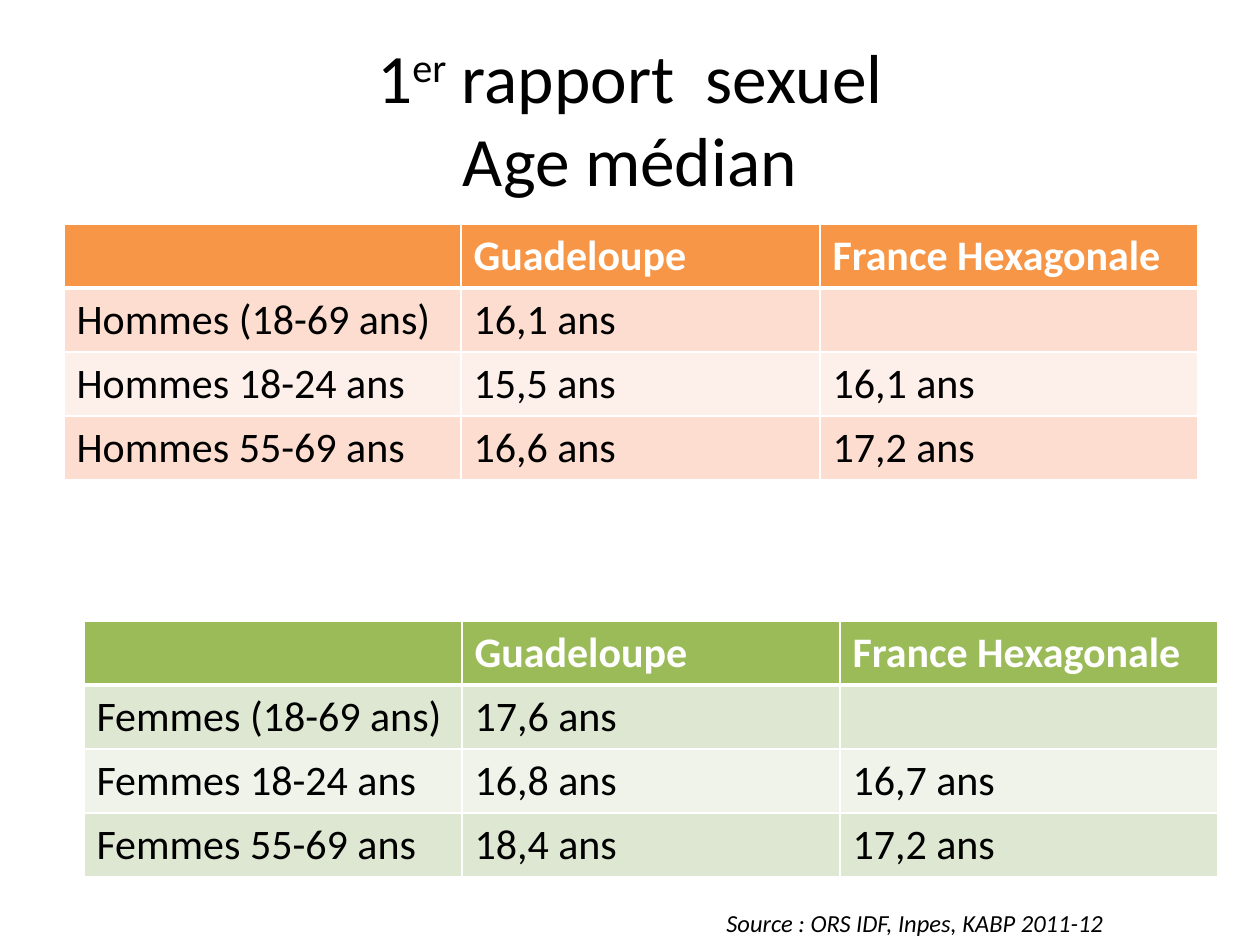
from pptx import Presentation
from pptx.dml.color import RGBColor as Rgb
from pptx.enum.text import MSO_ANCHOR as Anchor, PP_ALIGN as Align
from pptx.oxml import parse_xml
from pptx.oxml.ns import nsdecls
from pptx.util import Pt

SCALE = 914400 / 126
INK = {
    "black": "000000", "white": "FFFFFF",
    "orange": "F79646", "peach": "FCDDCF", "blush": "FDEFE9",
    "green": "9BBB59", "sage": "DEE7D1", "mist": "EFF3EA",
}


def emu(*px):
    return [round(n * SCALE) for n in px]


def write(para, text, size=24, ink="black", bold=False, italic=False, raised=False):
    run = para.add_run()
    run.text = text
    font = run.font
    font.name, font.size, font.bold, font.italic = "Calibri", Pt(size), bold, italic
    font.color.rgb = Rgb.from_string(INK[ink])
    if raised:
        run._r.get_or_add_rPr().set("baseline", "30000")


def edge(cell, side, width):
    cell._tc.get_or_add_tcPr().append(parse_xml(
        f'<a:ln{side} {nsdecls("a")} w="{Pt(width)}"><a:solidFill>'
        f'<a:srgbClr val="{INK["white"]}"/></a:solidFill></a:ln{side}>'))


class Deck:
    """Holds the style and the current slide."""

    def __init__(self):
        self.show = Presentation()
        self.show.slide_width, self.show.slide_height = emu(1260, 945)
        self.slide = self.show.slides.add_slide(self.show.slide_layouts[5])

    def title(self, box, lines):
        shape = self.slide.shapes.title
        shape.left, shape.top, shape.width, shape.height = emu(*box)
        frame = shape.text_frame
        frame.word_wrap, frame.vertical_anchor = True, Anchor.MIDDLE
        para = frame.paragraphs[0]
        para.alignment = Align.CENTER
        for i, line in enumerate(lines):
            if i:
                para.add_line_break()
            for text, raised in line:
                write(para, text, size=39.6, raised=raised)

    def table(self, left, top, cols, rows, fills, high=64):
        box = emu(left, top, sum(cols), high * len(rows))
        grid = self.slide.shapes.add_table(len(rows), len(cols), *box).table
        for col, wide in zip(grid.columns, emu(*cols)):
            col.width = wide
        head, *bands = fills
        for r, row in enumerate(rows):
            grid.rows[r].height = emu(high)[0]
            fill = bands[(r - 1) % 2] if r else head
            for c, text in enumerate(row):
                cell = grid.cell(r, c)
                for side, width in zip("LRTB", (1, 1, 3 if r == 1 else 1, 1 if r else 3)):
                    edge(cell, side, width)
                cell.fill.solid()
                cell.fill.fore_color.rgb = Rgb.from_string(INK[fill])
                if text:
                    write(cell.text_frame.paragraphs[0], text,
                          ink="black" if r else "white", bold=not r)

    def note(self, box, text):
        frame = self.slide.shapes.add_textbox(*emu(*box)).text_frame
        frame.word_wrap = True
        write(frame.paragraphs[0], text, size=14, italic=True)


def main():
    deck = Deck()
    deck.title((63, 38, 1134, 158), [
        [("1", False), ("er", True), (" rapport  sexuel", False)],
        [("Age médian", False)],
    ])
    heads = ("", "Guadeloupe", "France Hexagonale")
    deck.table(64, 224, (397, 359, 378), [
        heads,
        ("Hommes (18-69 ans)", "16,1 ans", ""),
        ("Hommes 18-24 ans", "15,5 ans", "16,1 ans"),
        ("Hommes 55-69 ans", "16,6 ans", "17,2 ans"),
    ], ("orange", "peach", "blush"))
    deck.table(84, 621, (378, 378, 378), [
        heads,
        ("Femmes (18-69 ans)", "17,6 ans", ""),
        ("Femmes 18-24 ans", "16,8 ans", "16,7 ans"),
        ("Femmes 55-69 ans", "18,4 ans", "17,2 ans"),
    ], ("green", "sage", "mist"))
    deck.note((714, 902, 546, 43), "Source : ORS IDF, Inpes, KABP 2011-12")
    deck.show.save("out.pptx")


if __name__ == "__main__":
    main()
